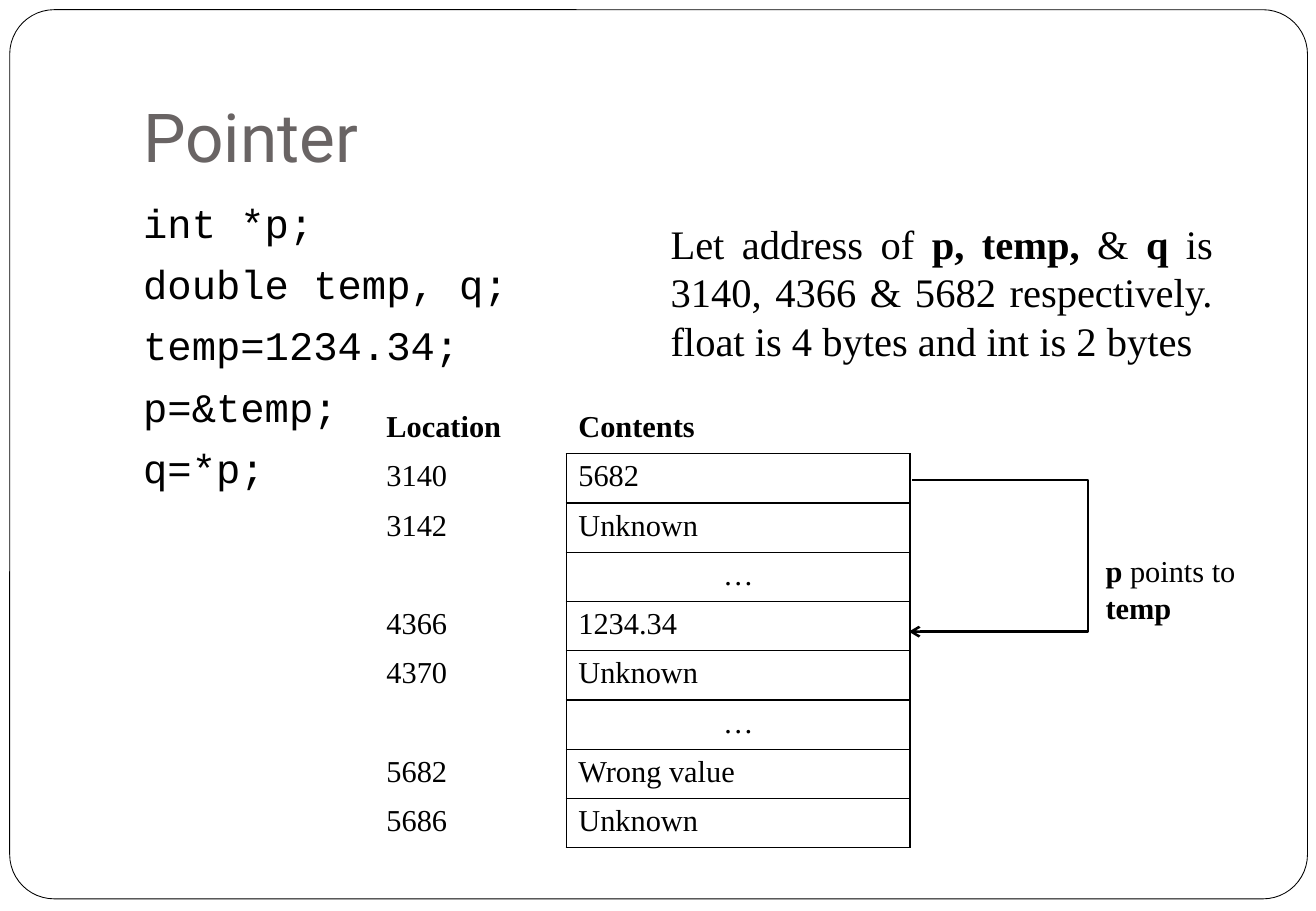
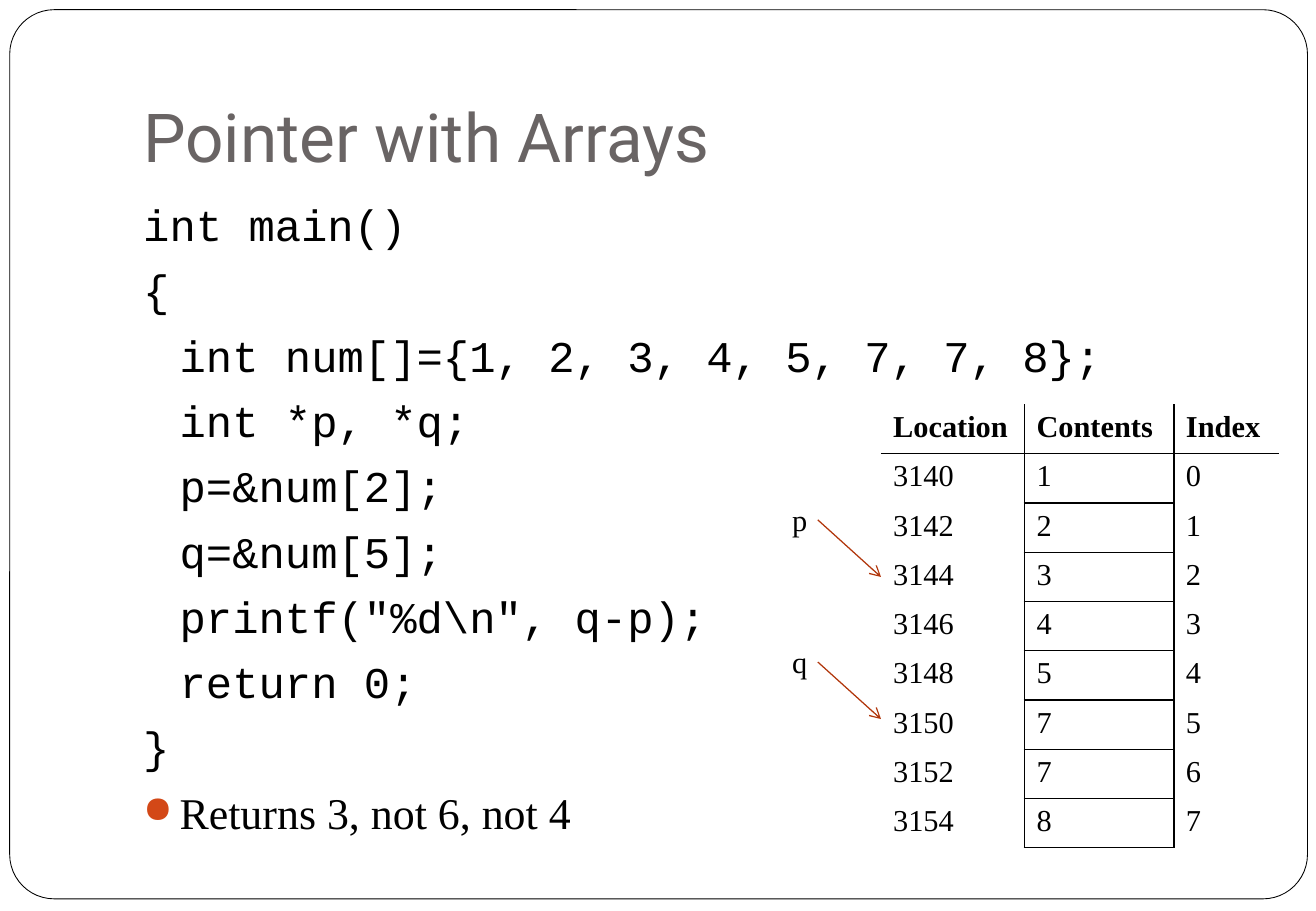
from lxml.etree import SubElement
from pptx import Presentation
from pptx.dml.color import RGBColor
from pptx.enum.shapes import MSO_CONNECTOR, MSO_SHAPE
from pptx.enum.text import MSO_ANCHOR, MSO_AUTO_SIZE, PP_ALIGN
from pptx.oxml.ns import qn
from pptx.util import Inches, Pt

COLORS = {"black": "000000", "white": "FFFFFF", "title": "696464",
          "bullet": "D34817", "arrow": "B1360B"}
TITLE_FONT, CODE_FONT, TEXT_FONT = "Roboto", "Courier New", "Times New Roman"
NO_TABLE_STYLE = "{2D5ABB26-0587-4C30-8999-92F81FD0307C}"
TABLE_TOP, TABLE_HEIGHT = 3.33, 3.65
INDENT = 0.3


def rgb(name):
    return RGBColor.from_string(COLORS[name])


def write(paragraph, text, font=TEXT_FONT, size=18, color="black", bold=False, align=None):
    """Add text to a paragraph; ** switches bold on and off."""
    paragraph.alignment = align
    for index, part in enumerate(text.split("**")):
        if part:
            run = paragraph.add_run()
            run.text = part
            run.font.name = font
            run.font.size = Pt(size)
            run.font.bold = bold or index % 2 == 1
            run.font.color.rgb = rgb(color)


def add_text(slide, text, left, top, width, height, wrap=True, **text_format):
    box = slide.shapes.add_textbox(Inches(left), Inches(top), Inches(width), Inches(height))
    box.text_frame.word_wrap = wrap
    write(box.text_frame.paragraphs[0], text, **text_format)


def add_frame(slide, layout):
    """Draw the rounded frame and place it in the layout, behind everything."""
    frame = slide.shapes.add_shape(MSO_SHAPE.ROUNDED_RECTANGLE, Inches(0.08), Inches(0.08),
                                   Inches(10.68), Inches(7.32))
    frame.adjustments[0] = 0.05
    frame.shadow.inherit = False
    frame.fill.solid()
    frame.fill.fore_color.rgb = rgb("white")
    frame.line.color.rgb = rgb("black")
    frame.line.width = Pt(0.5)
    layout.shapes.element.insert(2, frame.element)


def set_title(slide, text):
    title = slide.shapes.title
    title.left, title.top = Inches(1.08), Inches(0.3)
    title.width, title.height = Inches(9.21), Inches(1.25)
    text_frame = title.text_frame
    text_frame.auto_size = MSO_AUTO_SIZE.NONE
    text_frame.vertical_anchor = MSO_ANCHOR.BOTTOM
    text_frame.margin_bottom = Inches(0.1)
    write(text_frame.paragraphs[0], text, font=TITLE_FONT, size=40, color="title",
          align=PP_ALIGN.LEFT)


def add_bullet(paragraph):
    properties = paragraph._p.get_or_add_pPr()
    properties.set("indent", str(-Inches(INDENT)))
    color = SubElement(properties, qn("a:buClr"))
    SubElement(color, qn("a:srgbClr"), val=COLORS["bullet"])
    SubElement(properties, qn("a:buSzPct"), val="85000")
    SubElement(properties, qn("a:buChar"), char="●")


def add_code(slide, lines, size, conclusion=None):
    """Code lines, indented where they start with a tab, then an optional bullet."""
    box = slide.shapes.add_textbox(Inches(1.08), Inches(1.58), Inches(9.21), Inches(5))
    text_frame = box.text_frame
    text_frame.word_wrap = True
    entries = [(line, CODE_FONT) for line in lines]
    if conclusion:
        entries.append(("\t" + conclusion, TEXT_FONT))
    for index, (line, font) in enumerate(entries):
        paragraph = text_frame.add_paragraph() if index else text_frame.paragraphs[0]
        paragraph.space_before, paragraph.space_after = Pt(5.8), Pt(1.7)
        if line.startswith("\t"):
            paragraph._p.get_or_add_pPr().set("marL", str(Inches(INDENT)))
        if font == TEXT_FONT:
            add_bullet(paragraph)
        # Code keeps its own asterisks: only single ones occur
        write(paragraph, line.lstrip("\t"), font=font, size=size)


def set_borders(cell, sides):
    properties = cell._tc.get_or_add_tcPr()
    for side in "LRTB":
        line = SubElement(properties, qn(f"a:ln{side}"), w=str(Pt(1)))
        if side in sides:
            fill = SubElement(line, qn("a:solidFill"))
            SubElement(fill, qn("a:srgbClr"), val=COLORS["black"])
        else:
            SubElement(line, qn("a:noFill"))


def border_sides(row, column, ruled_header):
    """Box the contents column; a ruled header also extends its lines."""
    upright = row > 0 or ruled_header
    rules = {
        "L": upright and column > 0,
        "R": upright and column < 2,
        "T": row > 0 and (column == 1 or (row == 1 and ruled_header)),
        "B": column == 1 or (row == 0 and ruled_header),
    }
    return [side for side, drawn in rules.items() if drawn]


def add_memory_table(slide, rows, left, widths, ruled_header=False):
    table_frame = slide.shapes.add_table(len(rows), len(widths), Inches(left), Inches(TABLE_TOP),
                                         Inches(sum(widths)), Inches(TABLE_HEIGHT))
    table = table_frame.table
    table._tbl.tblPr.find(qn("a:tableStyleId")).text = NO_TABLE_STYLE
    table.horz_banding = table.first_row = False
    for column, width in zip(table.columns, widths):
        column.width = Inches(width)
    for row, values in enumerate(rows):
        table.rows[row].height = Inches(TABLE_HEIGHT / len(rows))
        for column, value in enumerate(values):
            cell = table.cell(row, column)
            set_borders(cell, border_sides(row, column, ruled_header))
            cell.fill.background()
            write(cell.text_frame.paragraphs[0], value, bold=row == 0,
                  align=PP_ALIGN.CENTER if value == "…" else PP_ALIGN.LEFT)


def add_arrow(slide, begin, end, color, width, bend_x=None):
    """Straight arrow, or an elbow that runs out to bend_x and back."""
    kind = MSO_CONNECTOR.STRAIGHT if bend_x is None else MSO_CONNECTOR.ELBOW
    arrow = slide.shapes.add_connector(kind, *map(Inches, begin + end))
    arrow.line.color.rgb = rgb(color)
    arrow.line.width = Pt(width)
    properties = arrow.element.spPr
    SubElement(properties.find(qn("a:ln")), qn("a:tailEnd"), type="arrow")
    SubElement(properties, qn("a:effectLst"))
    if bend_x is not None:
        ratio = (bend_x - begin[0]) / (end[0] - begin[0])
        adjustments = properties.find(qn("a:prstGeom")).find(qn("a:avLst"))
        SubElement(adjustments, qn("a:gd"), name="adj1", fmla=f"val {round(ratio * 100000)}")


def build_pointer(slide):
    set_title(slide, "Pointer")
    add_code(slide, ["int *p;", "double temp, q;", "temp=1234.34;", "p=&temp;", "q=*p;"], 24)
    add_memory_table(slide, [
        ("Location", "Contents"), ("3140", "5682"), ("3142", "Unknown"), ("", "…"),
        ("4366", "1234.34"), ("4370", "Unknown"), ("", "…"),
        ("5682", "Wrong value"), ("5686", "Unknown"),
    ], 3.08, [1.58, 2.83])
    add_text(slide, "**p** points to **temp**", 9, 4.5, 1.6, 0.7)
    add_text(slide, "Let address of **p, temp,** & **q** is 3140, 4366 & 5682 respectively. "
             "float is 4 bytes and int is 2 bytes", 5.42, 1.75, 4.66, 1.31,
             size=24, align=PP_ALIGN.JUSTIFY)
    add_arrow(slide, (7.51, 3.95), (7.48, 5.2), "black", 1.5, bend_x=8.96)


def build_arrays(slide):
    set_title(slide, "Pointer with Arrays")
    add_code(slide, [
        "int main()", "{", "\tint num[]={1, 2, 3, 4, 5, 7, 7, 8};", "\tint *p, *q;",
        "\tp=&num[2];", "\tq=&num[5];", "\tprintf(\"%d\\n\", q-p);", "\treturn 0;", "}",
    ], 26, conclusion="Returns 3, not 6, not 4")
    numbers = [1, 2, 3, 4, 5, 7, 7, 8]
    rows = [(str(3140 + 2 * index), str(number), str(index))
            for index, number in enumerate(numbers)]
    add_memory_table(slide, [("Location", "Contents", "Index")] + rows,
                     7.25, [1.18, 1.23, 0.87], ruled_header=True)
    for name, top in (("p", 4.08), ("q", 5.25)):
        add_text(slide, name, 6.42, top, 0.32, 0.4, wrap=False)
        add_arrow(slide, (6.73, top + 0.2), (7.25, top + 0.67), "arrow", 0.75)


def main():
    presentation = Presentation()
    presentation.slide_width, presentation.slide_height = Inches(10.83), Inches(7.5)
    layout = presentation.slide_layouts[5]
    for number, build in enumerate((build_pointer, build_arrays)):
        slide = presentation.slides.add_slide(layout)
        if number == 0:
            add_frame(slide, layout)
        build(slide)
    presentation.save("out.pptx")


if __name__ == "__main__":
    main()
